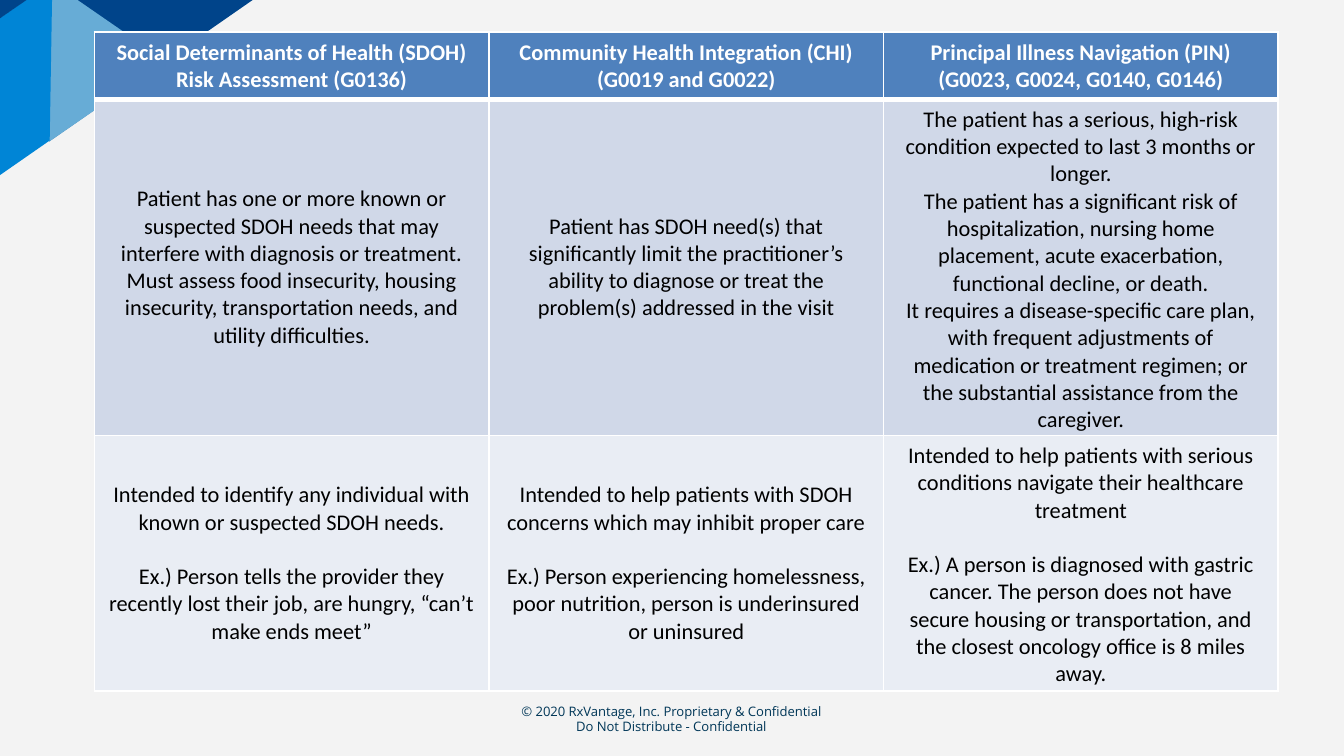
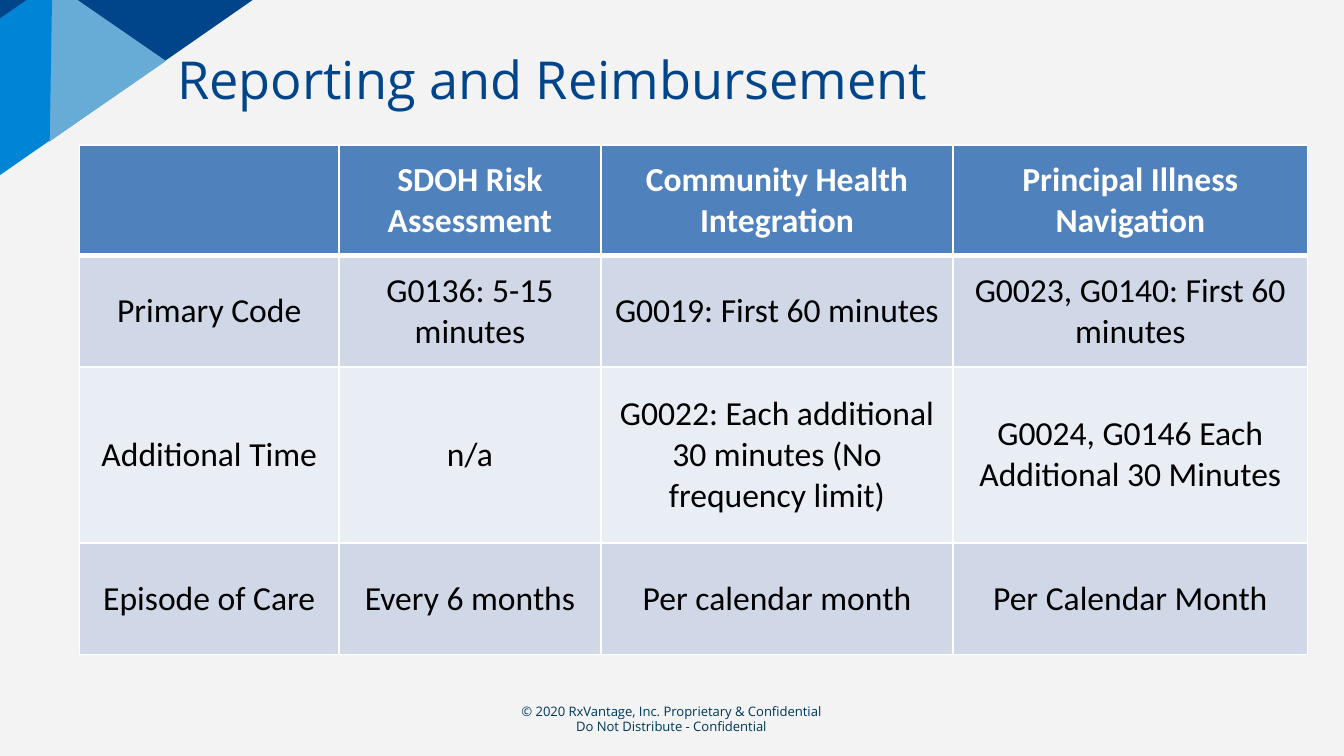
from lxml.etree import SubElement
from pptx import Presentation
from pptx.dml.color import RGBColor
from pptx.enum.shapes import MSO_SHAPE as Preset
from pptx.enum.text import MSO_ANCHOR as Anchor, PP_ALIGN as Align
from pptx.oxml.ns import qn
from pptx.util import Pt

COLORS = {
    "background": "F3F3F3", "navy": "00448A", "sky": "67ACD6", "azure": "0085D6",
    "footer": "003657", "header": "4F81BD", "band_dark": "D0D8E8",
    "band_light": "E9EDF4", "white": "FFFFFF", "black": "000000",
}
FOOTER_FONT = {"name": "Open Sans", "size": Pt(7), "bold": False}
TITLE_FONT = {"name": "Open Sans", "size": Pt(28), "bold": False}
MARGINS = ("margin_left", "margin_top", "margin_right", "margin_bottom")

# Corner facets: preset, left, top, width, height, rotation, adjustment, colour
FACETS = [
    (Preset.PARALLELOGRAM, -32.4, -111.6, 394.6, 82.1, 145.2, 0.72, "navy"),
    (Preset.ISOSCELES_TRIANGLE, 14.4, 1.4, 86.4, 62.6, 90, 0.5, "sky"),
    (Preset.PARALLELOGRAM, -148.3, 45.4, 215.3, 69.1, 145.2, 0.72, "azure"),
    (Preset.ISOSCELES_TRIANGLE, -82.1, -59, 131, 95, 90, 0.5, "navy"),
]
FOOTER = ("© 2020 RxVantage, Inc. Proprietary & Confidential\n"
          "Do Not Distribute - Confidential")

# Each line break starts a new paragraph
SERVICES = [
    ["Social Determinants of Health (SDOH) Risk Assessment (G0136)",
     "Community Health Integration (CHI) (G0019 and G0022)",
     "Principal Illness Navigation (PIN) (G0023, G0024, G0140, G0146)"],
    ["Patient has one or more known or suspected SDOH needs that may interfere "
     "with diagnosis or treatment.\n"
     "Must assess food insecurity, housing insecurity, transportation needs, "
     "and utility difficulties.",
     "Patient has SDOH need(s) that significantly limit the practitioner’s "
     "ability to diagnose or treat the problem(s) addressed in the visit",
     "The patient has a serious, high-risk condition expected to last 3 months "
     "or longer.\n"
     "The patient has a significant risk of hospitalization, nursing home "
     "placement, acute exacerbation, functional decline, or death.\n"
     "It requires a disease-specific care plan, with frequent adjustments of "
     "medication or treatment regimen; or the substantial assistance from the "
     "caregiver."],
    ["Intended to identify any individual with known or suspected SDOH needs.\n"
     "Ex.) Person tells the provider they recently lost their job, are hungry, "
     "“can’t make ends meet”",
     "Intended to help patients with SDOH concerns which may inhibit proper care\n"
     "Ex.) Person experiencing homelessness, poor nutrition, person is "
     "underinsured or uninsured",
     "Intended to help patients with serious conditions navigate their "
     "healthcare treatment\n"
     "Ex.) A person is diagnosed with gastric cancer. The person does not have "
     "secure housing or transportation, and the closest oncology office is 8 "
     "miles away."],
]
REPORTING = [
    ["", "SDOH Risk Assessment", "Community Health Integration",
     "Principal Illness Navigation"],
    ["Primary Code", "G0136: 5-15 minutes", "G0019: First 60 minutes",
     "G0023, G0140: First 60 minutes"],
    ["Additional Time", "n/a",
     "G0022: Each additional 30 minutes (No frequency limit)",
     "G0024, G0146 Each Additional 30 Minutes"],
    ["Episode of Care", "Every 6 months", "Per calendar month",
     "Per Calendar Month"],
]
PAGES = [
    {"title": None, "cells": SERVICES, "left": 50.6, "top": 17.2, "height": 352.8,
     "columns": [211.4] * 3, "rows": [33, 126, 126], "size": 12},
    {"title": "Reporting and Reimbursement", "cells": REPORTING,
     "left": 42.6, "top": 77.8, "height": 273,
     "columns": [139, 140.4, 188.6, 190], "rows": [59, 59.8, 94.3, 59.8], "size": 18},
]


def rgb(color):
    return RGBColor.from_string(COLORS[color])


def write(frame, text, font, color, align):
    """Fill a text frame, one paragraph per line, with a gap before examples."""
    frame.word_wrap = True
    for index, line in enumerate(text.split("\n")):
        paragraph = frame.add_paragraph() if index else frame.paragraphs[0]
        paragraph.alignment = align
        if line.startswith("Ex.)"):
            paragraph.space_before = Pt(14.6)
        if line:
            paragraph.add_run().text = line
        for key, value in font.items():
            for target in (paragraph, *paragraph.runs):
                setattr(target.font, key, value)
        for run in paragraph.runs:
            run.font.color.rgb = rgb(color)


deck = Presentation()
deck.slide_width, deck.slide_height = Pt(720), Pt(405)

for page in PAGES:
    slide = deck.slides.add_slide(deck.slide_layouts[6])
    slide.background.fill.solid()
    slide.background.fill.fore_color.rgb = rgb("background")

    # Corner facets
    for preset, left, top, width, height, rotation, slant, color in FACETS:
        facet = slide.shapes.add_shape(preset, Pt(left), Pt(top), Pt(width), Pt(height))
        facet.rotation = rotation
        facet.adjustments[0] = slant
        facet.shadow.inherit = False
        facet.fill.solid()
        facet.fill.fore_color.rgb = rgb(color)
        facet.line.fill.background()

    # Footer and title
    captions = [(FOOTER, (247.7, 369.4, 223.9, 25.2), FOOTER_FONT, "footer", Align.CENTER)]
    if page["title"]:
        captions.append((page["title"], (87.8, 18, 589.7, 62.6), TITLE_FONT, "navy",
                         Align.LEFT))
    for text, place, font, color, align in captions:
        caption = slide.shapes.add_textbox(*map(Pt, place)).text_frame
        for margin in MARGINS:
            setattr(caption, margin, Pt(7.2))
        write(caption, text, font, color, align)

    # Table
    columns, rows = page["columns"], page["rows"]
    holder = slide.shapes.add_table(len(rows), len(columns), Pt(page["left"]),
                                    Pt(page["top"]), Pt(sum(columns)), Pt(sum(rows)))
    grid = holder.table
    for column, width in zip(grid.columns, columns):
        column.width = Pt(width)
    for row, height in zip(grid.rows, rows):
        row.height = Pt(height)
    holder.height = Pt(page["height"])

    for r, texts in enumerate(page["cells"]):
        heading = r == 0
        band = "header" if heading else "band_dark" if r % 2 else "band_light"
        font = {"name": "Calibri", "size": Pt(page["size"]), "bold": heading}
        for c, text in enumerate(texts):
            cell = grid.cell(r, c)
            cell.vertical_anchor = Anchor.MIDDLE
            write(cell.text_frame, text, font, "white" if heading else "black",
                  Align.CENTER)
            # White borders, thick between the heading and the body
            for side in "LRTB":
                thick = (r, side) in ((0, "B"), (1, "T"))
                border = SubElement(cell._tc.get_or_add_tcPr(), qn(f"a:ln{side}"),
                                    w=str(Pt(3 if thick else 1)))
                paint = SubElement(border, qn("a:solidFill"))
                SubElement(paint, qn("a:srgbClr"), val=COLORS["white"])
            cell.fill.solid()
            cell.fill.fore_color.rgb = rgb(band)

deck.save("out.pptx")
